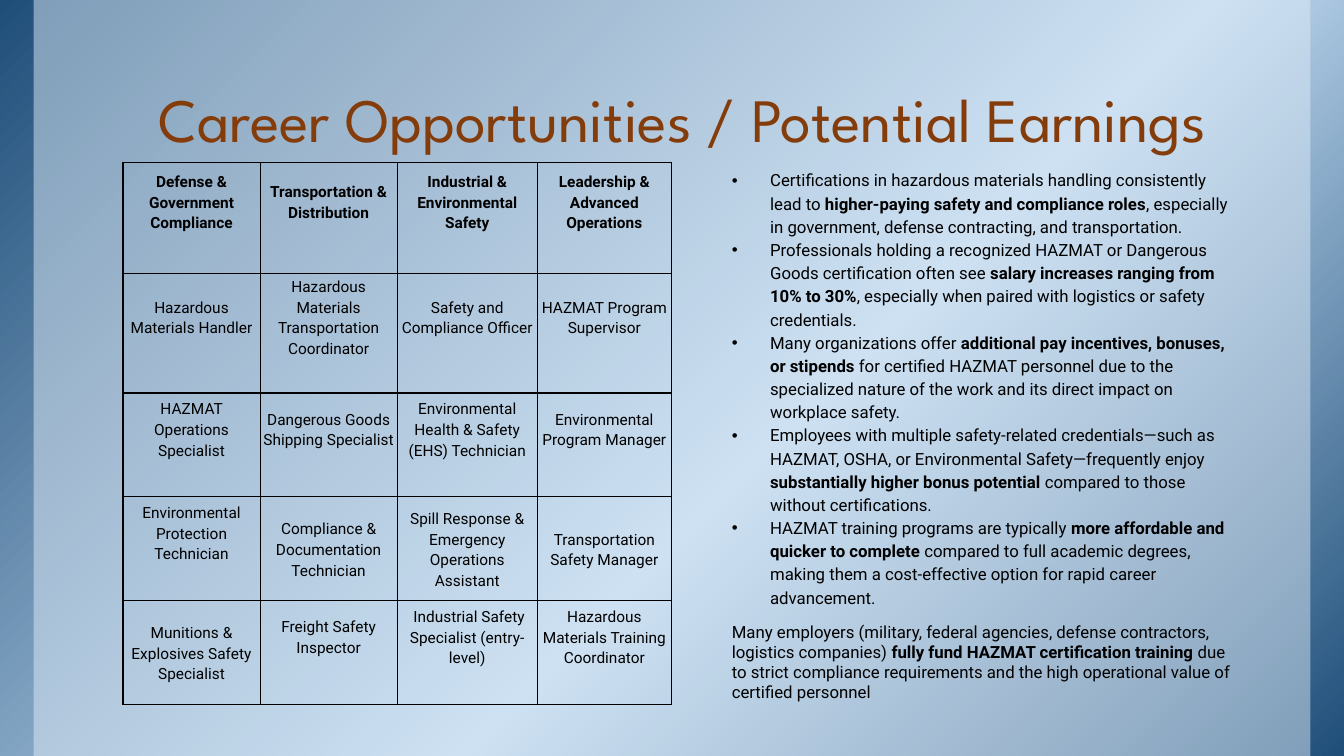
import copy

import pptx
import pptx.dml.color
import pptx.enum.shapes
import pptx.enum.text
import pptx.oxml
import pptx.oxml.ns
import pptx.util

RGBColor = pptx.dml.color.RGBColor
Inches, Pt = pptx.util.Inches, pptx.util.Pt
PP_ALIGN = pptx.enum.text.PP_ALIGN
MSO_ANCHOR = pptx.enum.text.MSO_ANCHOR

NAVY = RGBColor(0x1F, 0x4E, 0x79)
SKY = RGBColor(0xBD, 0xD7, 0xEE)
PALE = RGBColor(0xDE, 0xEB, 0xF7)
RUST = RGBColor(0x84, 0x3C, 0x0B)
BLACK = RGBColor(0, 0, 0)

# Slide grid, in inches
WIDTH, HEIGHT = 13.33, 7.5
LEFT, RIGHT = 1.22, 12.33
BODY_TOP = 1.61
COL_WIDTHS = [1.36, 1.36, 1.39, 1.33]
ROW_HEIGHTS = [1.1, 1.19] + [1.03] * 3
TABLE_WIDTH = sum(COL_WIDTHS)
GUTTER = 0.5

CAREERS = [
    ["Defense & Government Compliance", "Transportation & Distribution",
     "Industrial & Environmental Safety", "Leadership & Advanced Operations"],
    ["Hazardous Materials Handler", "Hazardous Materials Transportation Coordinator",
     "Safety and Compliance Officer", "HAZMAT Program Supervisor"],
    ["HAZMAT Operations Specialist", "Dangerous Goods Shipping Specialist",
     "Environmental Health & Safety (EHS) Technician", "Environmental Program Manager"],
    ["Environmental Protection Technician", "Compliance & Documentation Technician",
     "Spill Response & Emergency Operations Assistant", "Transportation Safety Manager"],
    ["Munitions & Explosives Safety Specialist", "Freight Safety Inspector",
     " Industrial Safety Specialist (entry-level)",
     "Hazardous Materials Training Coordinator"],
]
# Cells (row, column) whose text sits in the exact middle; the rest sit higher
CENTRED_CELLS = {(3, 1), (3, 2), (3, 3), (4, 0)}

# Each entry: plain text, bold text, plain text
EARNINGS = [
    ("Certifications in hazardous materials handling consistently lead to ",
     "higher-paying safety and compliance roles",
     ", especially in government, defense contracting, and transportation."),
    ("Professionals holding a recognized HAZMAT or Dangerous Goods certification often see ",
     "salary increases ranging from 10% to 30%",
     ", especially when paired with logistics or safety credentials."),
    ("Many organizations offer ",
     "additional pay incentives, bonuses, or stipends",
     " for certified HAZMAT personnel due to the specialized nature of the work "
     "and its direct impact on workplace safety."),
    ("Employees with multiple safety-related credentials—such as HAZMAT, OSHA, "
     "or Environmental Safety—frequently enjoy ",
     "substantially higher bonus potential",
     " compared to those without certifications."),
    ("HAZMAT training programs are typically ",
     "more affordable and quicker to complete",
     " compared to full academic degrees, making them a cost-effective option "
     "for rapid career advancement."),
]
CLOSING = (
    "Many employers (military, federal agencies, defense contractors, logistics companies) ",
    "fully fund HAZMAT certification training",
    " due to strict compliance requirements and the high operational value "
    "of certified personnel")


def add_xml(parent, tag, **attributes):
    child = pptx.oxml.parse_xml(f'<a:{tag} {pptx.oxml.ns.nsdecls("a")}/>')
    for name, value in attributes.items():
        child.set(name, str(value))
    parent.append(child)
    return child


def set_font(font, name, size, color, bold=None):
    font.name, font.size, font.bold = name, Pt(size), bold
    font.color.rgb = color


def add_panel(s, x, y, w, h):
    sp = s.shapes.add_shape(pptx.enum.shapes.MSO_SHAPE.RECTANGLE,
                            Inches(x), Inches(y), Inches(w), Inches(h))
    sp.shadow.inherit = False
    sp.line.fill.background()
    return sp


def add_backdrop(s, x, y, w, h):
    # Diagonal gradient over the full box
    fill = add_panel(s, x, y, w, h).fill
    fill.gradient()
    fill.gradient_angle = 315
    first = fill._fill._gradFill.gsLst[0]
    first.addnext(copy.deepcopy(first))
    for stop, (position, color) in zip(
            fill.gradient_stops, [(0, NAVY), (0.58, SKY), (1, NAVY)]):
        stop.position = position
        stop.color.rgb = color

    # Translucent sheet between two side strips
    strip = w * 0.025
    sheet = add_panel(s, x + strip, y, w - 2 * strip, h)
    sheet.fill.solid()
    sheet.fill.fore_color.rgb = PALE
    add_xml(sheet.fill._xPr.find(".//" + pptx.oxml.ns.qn("a:srgbClr")), "alpha", val=50000)


def add_title(s, x, y, w, h):
    tf = s.shapes.add_textbox(Inches(x), Inches(y), Inches(w), Inches(h)).text_frame
    tf.word_wrap = True
    tf.vertical_anchor = MSO_ANCHOR.BOTTOM
    tf.margin_left = tf.margin_right = Inches(0.13)
    tf.margin_top = tf.margin_bottom = Inches(0.07)
    p = tf.paragraphs[0]
    p.text = "Career Opportunities / Potential Earnings"
    p.alignment = PP_ALIGN.CENTER
    p.line_spacing = 0.85
    set_font(p.font, "League Spartan", 44, RUST)


def add_borders(cell):
    tcPr = cell._tc.get_or_add_tcPr()
    for side in ("lnL", "lnR", "lnT", "lnB"):
        ln = add_xml(tcPr, side, w=Pt(1))
        add_xml(add_xml(ln, "solidFill"), "srgbClr", val=BLACK)


def add_career_table(s, x, y, w, h):
    table = s.shapes.add_table(len(CAREERS), len(COL_WIDTHS), Inches(x), Inches(y),
                               Inches(w), Inches(h)).table
    table.first_row = table.horz_banding = False
    for column, width in zip(table.columns, COL_WIDTHS):
        column.width = Inches(width)
    for i, (row, height) in enumerate(zip(table.rows, ROW_HEIGHTS)):
        row.height = Inches(height)
        for j, cell in enumerate(row.cells):
            add_borders(cell)
            cell.fill.background()
            cell.vertical_anchor = MSO_ANCHOR.MIDDLE
            cell.margin_left = cell.margin_right = cell.margin_top = Inches(0.01)
            cell.margin_bottom = Inches(0.01 if (i, j) in CENTRED_CELLS else 0.33)
            p = cell.text_frame.paragraphs[0]
            p.text = CAREERS[i][j]
            p.alignment = PP_ALIGN.CENTER
            p.line_spacing = 1.15
            set_font(p.font, "Roboto", 11, BLACK, bold=i == 0)


def add_earnings(s, x, y, w, h):
    tf = s.shapes.add_textbox(Inches(x), Inches(y), Inches(w), Inches(h)).text_frame
    tf.word_wrap = True
    for i, parts in enumerate(EARNINGS + [CLOSING]):
        p = tf.paragraphs[0] if i == 0 else tf.add_paragraph()
        if parts is not CLOSING:
            p.line_spacing = 1.15
            pPr = p._p.get_or_add_pPr()
            pPr.set("marL", str(Inches(0.38)))
            pPr.set("indent", str(-Inches(0.38)))
            add_xml(pPr, "buFont", typeface="Arial")
            add_xml(pPr, "buChar", char="•")
        if parts is EARNINGS[-1]:
            p.space_after = Pt(10)
        set_font(p.font, "Roboto", 12, BLACK)
        for k, text in enumerate(parts):
            r = p.add_run()
            r.text = text
            r.font.bold = k == 1


def main():
    prs = pptx.Presentation()
    prs.slide_width, prs.slide_height = Inches(WIDTH), Inches(HEIGHT)
    s = prs.slides.add_slide(prs.slide_layouts[6])
    earnings_left = LEFT + TABLE_WIDTH + GUTTER
    add_backdrop(s, 0, 0, WIDTH, HEIGHT)
    add_title(s, LEFT, 0.08, RIGHT - LEFT, BODY_TOP - 0.08)
    add_career_table(s, LEFT, BODY_TOP, TABLE_WIDTH, sum(ROW_HEIGHTS))
    add_earnings(s, earnings_left, BODY_TOP, RIGHT - earnings_left, 5.46)
    prs.save("out.pptx")


if __name__ == "__main__":
    main()
